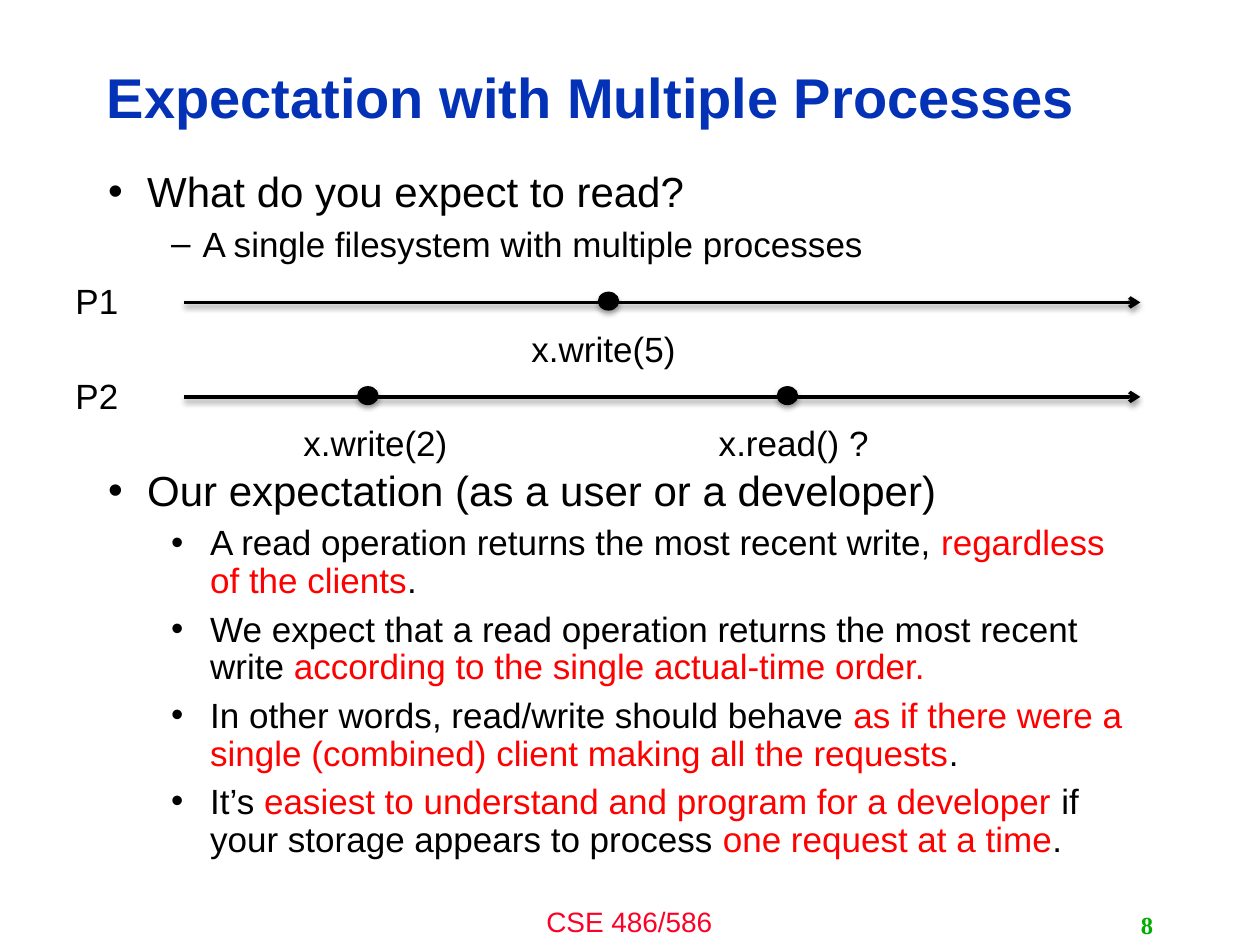
from dataclasses import dataclass

from lxml import etree
from pptx import Presentation
from pptx.dml.color import RGBColor
from pptx.enum.shapes import MSO_CONNECTOR as Connector, MSO_SHAPE as Shape
from pptx.enum.text import MSO_ANCHOR as Anchor, PP_ALIGN as Align
from pptx.oxml.ns import qn
from pptx.util import Inches, Pt


@dataclass(frozen=True)
class Theme:
    font: str = "Arial"
    number_font: str = "Times New Roman"
    ink: str = "000000"
    accent: str = "FF0000"
    title: str = "0332B7"
    footer: str = "FC0128"
    number: str = "00AE00"
    title_size: int = 32
    heading_size: int = 24
    text_size: int = 20
    footer_size: int = 16
    number_size: int = 14


THEME = Theme()

TITLE = "Expectation with Multiple Processes"
FOOTER = "CSE 486/586"
NUMBER = "8"

LEVELS = {
    "heading": ("•", 0.31, 0.31, THEME.heading_size, 0),
    "dash": ("–", 0.75, 0.25, THEME.text_size, 1),
    "point": ("•", 0.81, 0.31, THEME.text_size, 2),
}

QUESTION = [
    ("heading", ["What do you expect to read?"]),
    ("dash", ["A single filesystem with multiple processes"]),
]

# Odd-numbered pieces of each point are highlighted.
EXPECTATION = [
    ("heading", ["Our expectation (as a user or a developer)"]),
    ("point", ["A read operation returns the most recent write, ",
               "regardless of the clients", "."]),
    ("point", ["We expect that a read operation returns the most recent write ",
               "according to the single actual-time order."]),
    ("point", ["In other words, read/write should behave ",
               "as if there were a single (combined) client making all the requests", "."]),
    ("point", ["It’s ", "easiest to understand and program for a developer",
               " if your storage appears to process ", "one request at a time", "."]),
]

TIMELINES = [
    ("P1", [("x.write(5)", 4.83, 4.79)]),
    ("P2", [("x.write(2)", 2.92, 2.98), ("x.read() ?", 6.25, 6.3)]),
]
FIRST_LINE, LINE_GAP = 2.4, 0.75
LINE_START, LINE_END = 1.46, 9.05
DOT_WIDTH, DOT_HEIGHT = 0.16, 0.14
LABEL_WIDTH, LABEL_HEIGHT = 3.43, 0.44


def style_run(run, size, color, font=THEME.font, bold=False):
    run.font.name = font
    run.font.size = Pt(size)
    run.font.bold = bold
    run.font.color.rgb = RGBColor.from_string(color)


def add_frame(slide, left, top, width, height, anchor=Anchor.TOP):
    text_box = slide.shapes.add_textbox(*map(Inches, (left, top, width, height)))
    text_frame = text_box.text_frame
    text_frame.word_wrap = True
    text_frame.vertical_anchor = anchor
    return text_frame


def add_label(slide, text, box, size=THEME.text_size, color=THEME.ink,
              align=Align.LEFT, anchor=Anchor.TOP, font=THEME.font, bold=False):
    text_frame = add_frame(slide, *box, anchor)
    text_frame.text = text
    paragraph = text_frame.paragraphs[0]
    paragraph.alignment = align
    style_run(paragraph.runs[0], size, color, font, bold)


def add_outline(slide, top, height, items):
    text_frame = add_frame(slide, 0.76, top, 8.4, height)
    for index, (kind, pieces) in enumerate(items):
        bullet, margin, hanging, size, level = LEVELS[kind]
        paragraph = text_frame.paragraphs[0] if index == 0 else text_frame.add_paragraph()
        paragraph.level = level
        paragraph.line_spacing = 0.9
        paragraph.space_before = Pt(0.3 * size if index else 0)
        properties = paragraph._p.get_or_add_pPr()
        properties.set("marL", str(Inches(margin)))
        properties.set("indent", str(-Inches(hanging)))
        etree.SubElement(properties, qn("a:buFont"), typeface=THEME.font)
        etree.SubElement(properties, qn("a:buChar"), char=bullet)
        for position, piece in enumerate(pieces):
            run = paragraph.add_run()
            run.text = piece
            style_run(run, size, THEME.accent if position % 2 else THEME.ink)


def add_shadow(shape, distance, opacity):
    effects = etree.SubElement(shape._element.spPr, qn("a:effectLst"))
    shadow = etree.SubElement(effects, qn("a:outerShdw"), blurRad=str(Pt(3.1)),
                              dist=str(Pt(distance)), dir="5400000", rotWithShape="0")
    color = etree.SubElement(shadow, qn("a:srgbClr"), val=THEME.ink)
    etree.SubElement(color, qn("a:alpha"), val=str(opacity * 1000))


def add_timeline(slide, y, process, events):
    ink = RGBColor.from_string(THEME.ink)
    arrow = slide.shapes.add_connector(
        Connector.STRAIGHT, *map(Inches, (LINE_START, y, LINE_END, y)))
    arrow.line.width = Pt(2)
    arrow.line.color.rgb = ink
    etree.SubElement(arrow.line._get_or_add_ln(), qn("a:tailEnd"), type="arrow")
    add_shadow(arrow, 1.6, 38)
    add_label(slide, process, (0.5, y - 0.23, 0.95, LABEL_HEIGHT))
    for text, dot_center, label_center in events:
        dot = slide.shapes.add_shape(Shape.OVAL, *map(Inches, (
            dot_center - DOT_WIDTH / 2, y - 0.08, DOT_WIDTH, DOT_HEIGHT)))
        dot.fill.solid()
        dot.fill.fore_color.rgb = ink
        dot.line.color.rgb = ink
        dot.line.width = Pt(0.75)
        add_shadow(dot, 1.8, 35)
        add_label(slide, text, (label_center - LABEL_WIDTH / 2, y + 0.15,
                                LABEL_WIDTH, LABEL_HEIGHT), align=Align.CENTER)


def main():
    presentation = Presentation()
    presentation.slide_width = Inches(10)
    presentation.slide_height = Inches(7.5)
    slide = presentation.slides.add_slide(presentation.slide_layouts[6])

    add_label(slide, FOOTER, (3.33, 7.13, 3.33, 0.37), THEME.footer_size,
              THEME.footer, Align.CENTER)
    add_label(slide, TITLE, (0.75, 0.36, 7.98, 0.81), THEME.title_size,
              THEME.title, anchor=Anchor.MIDDLE, bold=True)
    add_outline(slide, 1.31, 0.9, QUESTION)
    add_outline(slide, 3.68, 3.02, EXPECTATION)
    add_label(slide, NUMBER, (7.17, 7.18, 2.08, 0.32), THEME.number_size,
              THEME.number, Align.RIGHT, Anchor.MIDDLE, THEME.number_font, True)
    for index, (process, events) in enumerate(TIMELINES):
        add_timeline(slide, FIRST_LINE + index * LINE_GAP, process, events)

    presentation.save("out.pptx")


if __name__ == "__main__":
    main()
